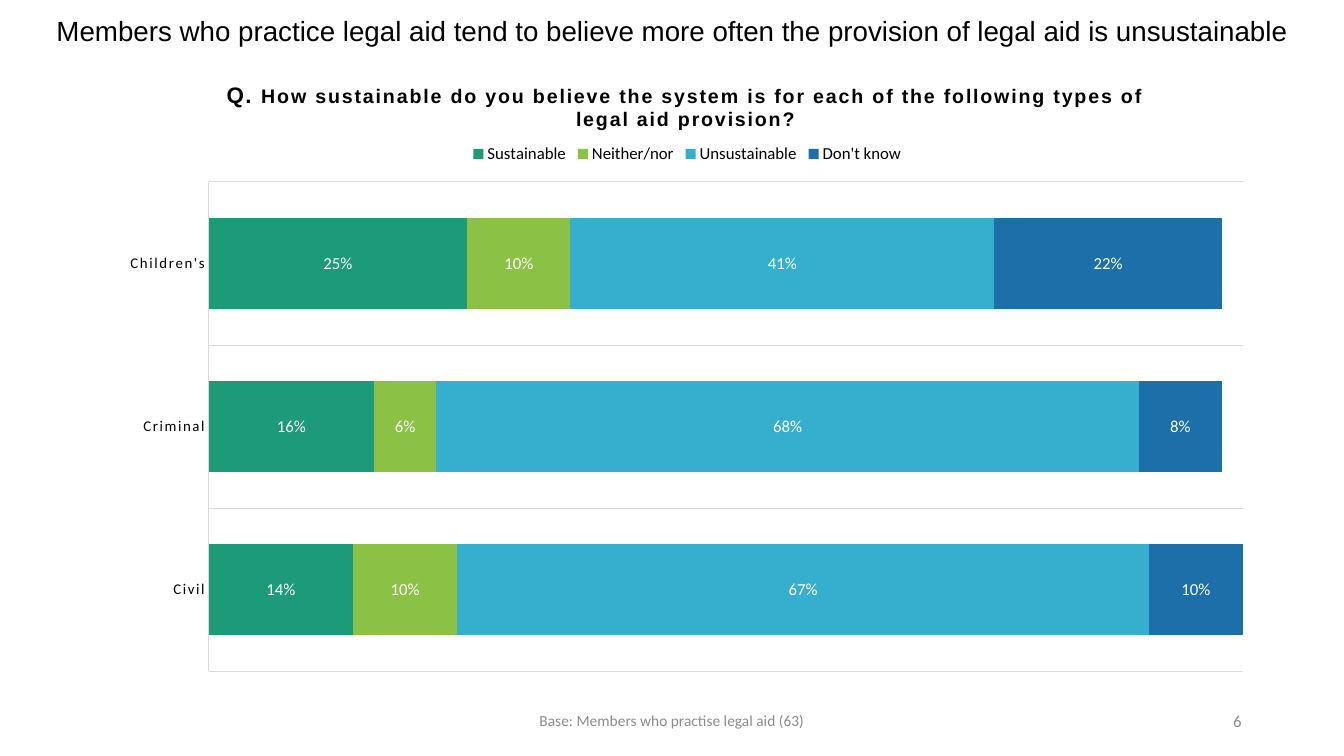
import pptx
import pptx.chart.data
import pptx.dml.color
import pptx.enum.chart
import pptx.enum.text
import pptx.oxml
import pptx.oxml.ns
import pptx.util

Pt = pptx.util.Pt
qn = pptx.oxml.ns.qn

COLORS = {
    "text": "000000",
    "muted": "8C8C8C",
    "label": "FFFFFF",
    "grid": "D9D9D9",
}
CATEGORIES = ["Civil", "Criminal", "Children's"]
SERIES = [
    ("Sustainable", [0.14, 0.16, 0.25], "1D9A78"),
    ("Neither/nor", [0.10, 0.06, 0.10], "8BC145"),
    ("Unsustainable", [0.67, 0.68, 0.41], "36AFCE"),
    ("Don't know", [0.10, 0.08, 0.22], "1D6FA9"),
]


def rgb(color):
    return pptx.dml.color.RGBColor.from_string(color)


def style_font(font, name, size, color, bold=False):
    font.name = name
    font.size = Pt(size)
    font.bold = bold
    font.color.rgb = rgb(color)


def add_run(paragraph, text, name, size, color, bold=False):
    run = paragraph.add_run()
    run.text = text
    style_font(run.font, name, size, color, bold)
    return run


def add_text(slide, box, text, name, size, color, align):
    shape = slide.shapes.add_textbox(*[Pt(length) for length in box])
    frame = shape.text_frame
    frame.word_wrap = True
    frame.vertical_anchor = pptx.enum.text.MSO_ANCHOR.MIDDLE
    paragraph = frame.paragraphs[0]
    paragraph.alignment = align
    add_run(paragraph, text, name, size, color)


def set_layout(element, position, **fractions):
    """Place a chart part by fractions of the chart's size."""
    for old in element.findall(qn("c:layout")):
        element.remove(old)
    layout = pptx.oxml.parse_xml(
        '<c:layout xmlns:c="http://schemas.openxmlformats.org/drawingml/2006/chart">'
        "<c:manualLayout/></c:layout>")
    manual = layout[0]
    if element.tag == qn("c:plotArea"):
        manual.append(manual.makeelement(qn("c:layoutTarget"), {"val": "inner"}))
    for side in ("x", "y"):
        manual.append(manual.makeelement(qn(f"c:{side}Mode"), {"val": "edge"}))
    for key, value in fractions.items():
        manual.append(manual.makeelement(qn(f"c:{key}"), {"val": str(value)}))
    element.insert(position, layout)


def add_chart_title(chart):
    chart.has_title = True
    paragraph = chart.chart_title.text_frame.paragraphs[0]
    paragraph.alignment = pptx.enum.text.PP_ALIGN.CENTER
    question = ("How sustainable do you believe the system is for each of "
                "the following types of legal aid provision?")
    for text, size in (("Q. ", 16), (question, 14)):
        run = add_run(paragraph, text, "Arial", size, COLORS["text"], True)
        run.font._element.set("spc", "120")
    chart.chart_title.include_in_layout = False
    set_layout(chart.chart_title._element, 1, x=0.1, y=0.03)


def style_axes(chart):
    enum = pptx.enum.chart
    category_axis = chart.category_axis
    category_axis.major_tick_mark = enum.XL_TICK_MARK.NONE
    category_axis.minor_tick_mark = enum.XL_TICK_MARK.NONE
    category_axis.has_major_gridlines = True
    for line in (category_axis.format.line, category_axis.major_gridlines.format.line):
        line.color.rgb = rgb(COLORS["grid"])
        line.width = Pt(0.75)
    font = category_axis.tick_labels.font
    style_font(font, "Calibri", 10.6, COLORS["text"])
    font._element.set("spc", "120")

    value_axis = chart.value_axis
    value_axis.minimum_scale = 0
    value_axis.maximum_scale = 1
    value_axis.has_major_gridlines = False
    value_axis.visible = False


def style_series(plot):
    plot.gap_width = 79
    plot.overlap = 100
    plot.vary_by_categories = False
    for series, (_, _, color) in zip(plot.series, SERIES):
        series.format.fill.solid()
        series.format.fill.fore_color.rgb = rgb(color)
        labels = series.data_labels
        labels.show_value = True
        labels.number_format = "0%"
        labels.number_format_is_linked = False
        labels.position = pptx.enum.chart.XL_LABEL_POSITION.CENTER
        style_font(labels.font, "Calibri", 12, COLORS["label"])


def add_legend(chart):
    chart.has_legend = True
    legend = chart.legend
    legend.position = pptx.enum.chart.XL_LEGEND_POSITION.TOP
    legend.include_in_layout = False
    style_font(legend.font, "Calibri", 12, COLORS["text"])
    set_layout(legend._element, 1, x=0.31, y=0.13, w=0.38, h=0.04)


def add_sustainability_chart(slide, box):
    data = pptx.chart.data.CategoryChartData(number_format="0%")
    data.categories = CATEGORIES
    for name, values, _ in SERIES:
        data.add_series(name, values)
    chart = slide.shapes.add_chart(
        pptx.enum.chart.XL_CHART_TYPE.BAR_STACKED,
        *[Pt(length) for length in box], data).chart
    style_font(chart.font, "Calibri", 10, COLORS["text"])
    add_chart_title(chart)
    style_axes(chart)
    style_series(chart.plots[0])
    add_legend(chart)
    plot_area = chart._chartSpace.find(".//" + qn("c:plotArea"))
    set_layout(plot_area, 0, x=0.087, y=0.195, w=0.892, h=0.784)


def main():
    presentation = pptx.Presentation()
    presentation.slide_width = Pt(960)
    presentation.slide_height = Pt(540)
    slide = presentation.slides.add_slide(presentation.slide_layouts[6])
    align = pptx.enum.text.PP_ALIGN

    # Headline
    add_text(slide, (0, 0, 960, 43),
             "Members who practice legal aid tend to believe more often "
             "the provision of legal aid is unsustainable",
             "Arial", 19.8, COLORS["text"], align.CENTER)

    # Survey results
    add_sustainability_chart(slide, (77, 43, 828, 446))

    # Footer and slide number
    add_text(slide, (318, 500, 324, 29), "Base: Members who practise legal aid (63)",
             "Calibri", 11, COLORS["muted"], align.CENTER)
    add_text(slide, (678, 500, 216, 29), "6",
             "Calibri", 12, COLORS["muted"], align.RIGHT)

    presentation.save("out.pptx")


if __name__ == "__main__":
    main()
